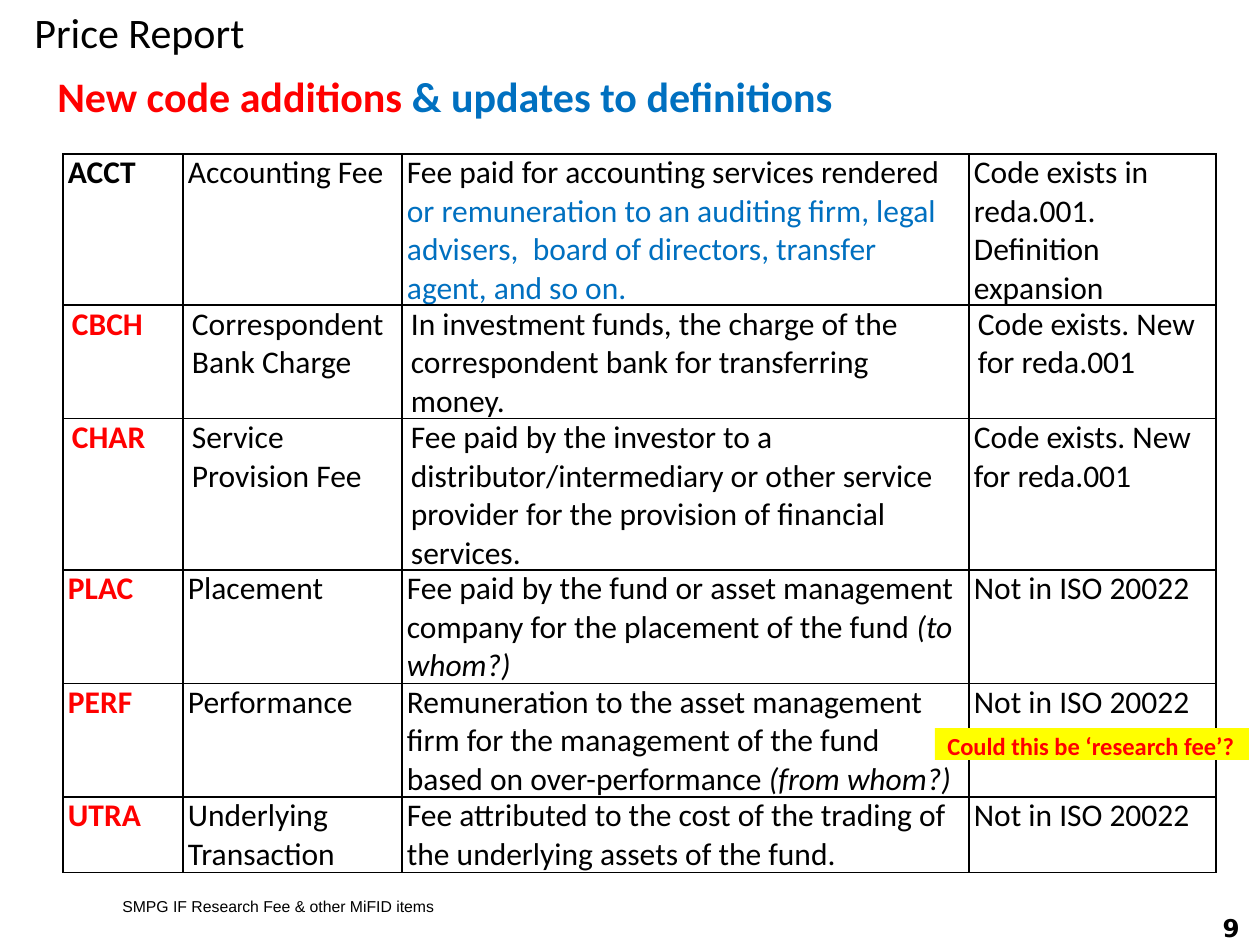
"""Build the Price Report slide with its table of fee codes."""
import pptx
import pptx.dml.color
import pptx.enum.shapes
import pptx.enum.text
import pptx.oxml
import pptx.oxml.ns
import pptx.util

PX = 914400 / 126
COLORS = {"black": "000000", "red": "FF0000", "blue": "0070C0", "yellow": "FFFF00"}
ALIGN = pptx.enum.text.PP_ALIGN
ANCHOR = pptx.enum.text.MSO_ANCHOR


def px(*lengths):
    return [pptx.util.Emu(round(n * PX)) for n in lengths]


def write(tf, text, size=18, font="Calibri", color="black", bold=False,
          italic=False, align=ALIGN.LEFT, anchor=ANCHOR.TOP, wrap=True):
    tf.word_wrap = wrap
    tf.vertical_anchor = anchor
    p = tf.paragraphs[0]
    p.alignment = align
    r = p.add_run()
    r.text = text
    r.font.size = pptx.util.Pt(size)
    r.font.name = font
    r.font.bold = bold
    r.font.italic = italic
    r.font.color.rgb = pptx.dml.color.RGBColor.from_string(COLORS[color])


prs = pptx.Presentation()
prs.slide_width, prs.slide_height = px(1260, 945)
s = prs.slides.add_slide(prs.slide_layouts[6])

title = s.shapes.add_textbox(*px(22, 0, 1226, 71))
write(title.text_frame, "Price Report", size=24)

footer = s.shapes.add_textbox(*px(110, 891, 782, 31))
write(footer.text_frame, "SMPG IF Research Fee & other MiFID items",
      size=9, font="Arial", anchor=ANCHOR.MIDDLE)

number = s.shapes.add_textbox(*px(1148, 912, 104, 31))
write(number.text_frame, "9", size=14, font="DejaVu Sans", bold=True,
      align=ALIGN.RIGHT, anchor=ANCHOR.MIDDLE)

heading = s.shapes.add_textbox(*px(45, 64, 1157, 63))
write(heading.text_frame, "New code additions ", size=24, color="red", bold=True)
write(heading.text_frame, "& updates to definitions", size=24, color="blue", bold=True)

NARROW, WIDE, DEFINITION_RIGHT = 5, 9, 13
ROWS = [
    ("ACCT", "Accounting Fee", "Fee paid for accounting services rendered ",
     "or remuneration to an auditing firm, legal advisers,  board of directors, "
     "transfer agent, and so on.",
     "Code exists in reda.001. Definition expansion"),
    ("CBCH", "Correspondent Bank Charge",
     "In investment funds, the charge of the correspondent bank for transferring money.",
     "", "Code exists. New for reda.001"),
    ("CHAR", "Service Provision Fee",
     "Fee paid by the investor to a distributor/intermediary or other service "
     "provider for the provision of financial services.",
     "", "Code exists. New for reda.001"),
    ("PLAC", "Placement",
     "Fee paid by the fund or asset management company for the placement of the fund ",
     "(to whom?)", "Not in ISO 20022"),
    ("PERF", "Performance",
     "Remuneration to the asset management firm for the management of the fund "
     "based on over-performance ",
     "(from whom?)", "Not in ISO 20022"),
    ("UTRA", "Underlying Transaction",
     "Fee attributed to the cost of the trading of the underlying assets of the fund.",
     "", "Not in ISO 20022"),
]
COL_WIDTHS = px(120, 219, 567, 247)
ROW_HEIGHTS = px(151, 113, 151, 113, 113, 75)
MARGINS = {"CBCH": [WIDE] * 4, "CHAR": [WIDE] * 3 + [NARROW]}

frame = s.shapes.add_table(len(ROWS), len(COL_WIDTHS), *px(63, 154), sum(COL_WIDTHS), sum(ROW_HEIGHTS))
table = frame.table
table.first_row = table.horz_banding = False
for column, width in zip(table.columns, COL_WIDTHS):
    column.width = width
for row, height in zip(table.rows, ROW_HEIGHTS):
    row.height = height

for row, (code, name, definition, extra, status) in zip(table.rows, ROWS):
    cells = list(row.cells)
    for cell, margin in zip(cells, MARGINS.get(code, [NARROW] * 4)):
        cell.margin_left, cell.margin_right = px(margin, margin)
        cell.margin_top = cell.margin_bottom = 0
        tcPr = cell._tc.get_or_add_tcPr()
        for side in ("lnL", "lnR", "lnT", "lnB"):
            tcPr.append(pptx.oxml.parse_xml(
                f'<a:{side} {pptx.oxml.ns.nsdecls("a")} w="12700"><a:solidFill>'
                f'<a:srgbClr val="{COLORS["black"]}"/></a:solidFill></a:{side}>'))
        cell.fill.background()
    cells[2].margin_right = px(DEFINITION_RIGHT)[0]
    tfs = [cell.text_frame for cell in cells]
    first = code == "ACCT"
    write(tfs[0], code, color="black" if first else "red", bold=True)
    write(tfs[1], name)
    write(tfs[2], definition)
    if extra:
        write(tfs[2], extra, color="blue" if first else "black", italic=not first)
    write(tfs[3], status)

sp = s.shapes.add_shape(pptx.enum.shapes.MSO_SHAPE.RECTANGLE, *px(935, 728, 314, 32))
sp.shadow.inherit = False
sp.fill.solid()
sp.fill.fore_color.rgb = pptx.dml.color.RGBColor.from_string(COLORS["yellow"])
sp.line.fill.background()

question = s.shapes.add_textbox(*px(935, 725, 314, 43))
write(question.text_frame, "Could this be ‘research fee’?", size=14, color="red",
      bold=True, wrap=False)

prs.save("out.pptx")
